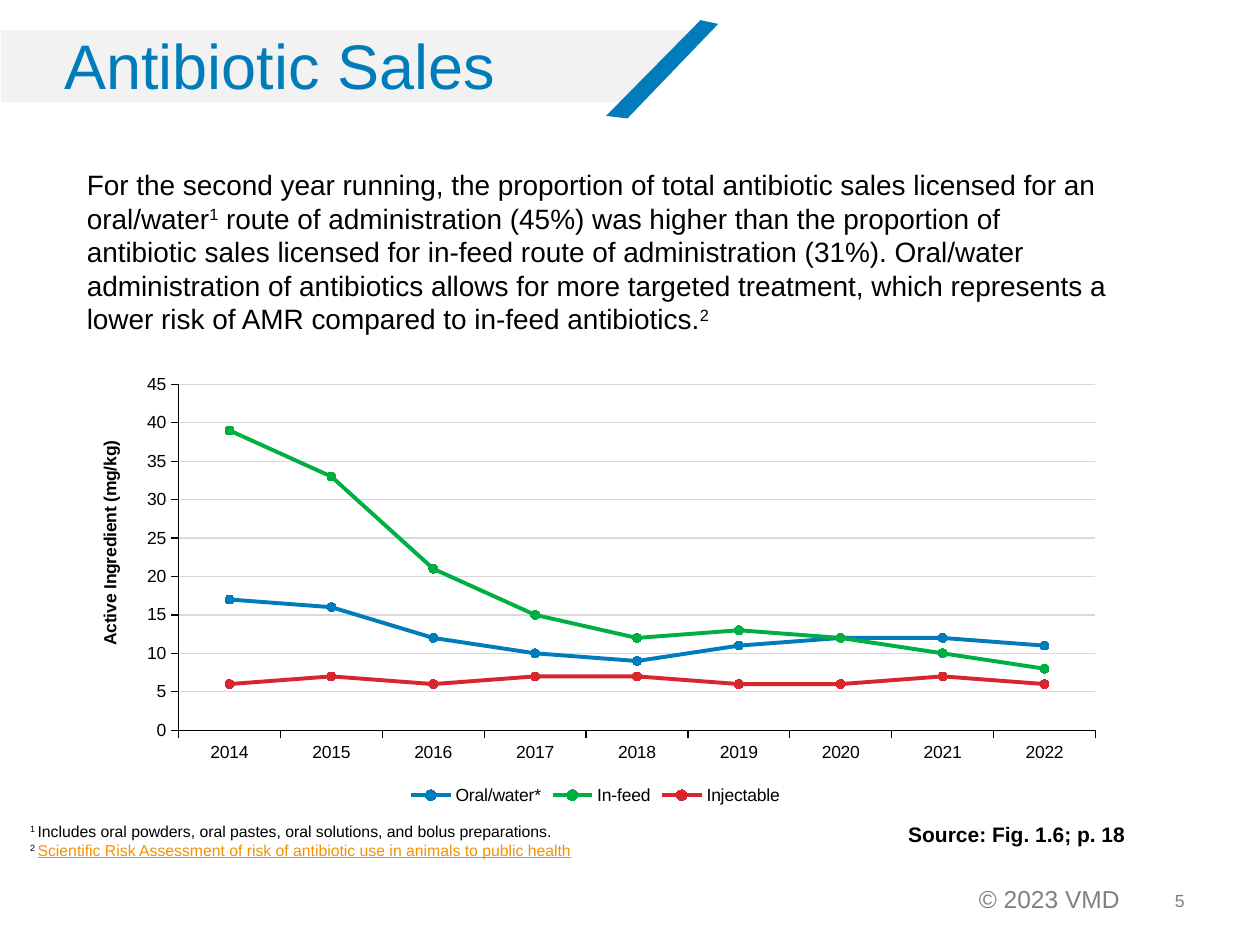
from dataclasses import dataclass
from typing import Optional

from lxml.etree import SubElement
from pptx import Presentation
from pptx.chart.chart import Chart
from pptx.chart.data import CategoryChartData
from pptx.dml.color import RGBColor
from pptx.enum.chart import (XL_CHART_TYPE, XL_LEGEND_POSITION,
                             XL_MARKER_STYLE, XL_TICK_MARK)
from pptx.enum.text import MSO_ANCHOR, PP_ALIGN
from pptx.oxml import parse_xml
from pptx.oxml.ns import nsdecls, qn
from pptx.slide import Slide
from pptx.util import Pt

BLACK = RGBColor(0, 0, 0)
WHITE = RGBColor(255, 255, 255)
BLUE = RGBColor(0x00, 0x7C, 0xBA)
GREEN = RGBColor(0x00, 0xAF, 0x41)
RED = RGBColor(0xD9, 0x26, 0x2E)
ORANGE = RGBColor(0xF4, 0x91, 0x00)
PALE_GRAY = RGBColor(0xF2, 0xF2, 0xF2)
GRID_GRAY = RGBColor(0xD9, 0xD9, 0xD9)
COPYRIGHT_GRAY = RGBColor(0x80, 0x80, 0x80)
NUMBER_GRAY = RGBColor(0x7F, 0x7F, 0x7F)
FONT = "Arial"


@dataclass
class Span:
    text: str
    raised: bool = False
    underline: bool = False
    color: Optional[RGBColor] = None


@dataclass
class TextBox:
    left: float
    top: float
    width: float
    height: float
    paragraphs: list[list[Span]]
    size: float
    color: RGBColor = BLACK
    bold: bool = False
    wrap: bool = True
    inset: bool = True
    align: PP_ALIGN = PP_ALIGN.LEFT
    anchor: MSO_ANCHOR = MSO_ANCHOR.TOP


@dataclass
class Band:
    points: list[tuple[float, float]]
    color: RGBColor


@dataclass
class Series:
    name: str
    values: list[int]
    color: RGBColor


BANDS = [
    Band([(0.72, 17.28), (407.52, 17.28), (352.08, 58.32), (0.72, 58.32)], PALE_GRAY),
    Band([(400.32, 11.52), (410.4, 13.68), (358.56, 67.68), (346.32, 66.24)], BLUE),
]

TEXT_BOXES = [
    TextBox(552.24, 501.84, 95.76, 24.48, [[Span("© 2023 VMD")]], 14,
            COPYRIGHT_GRAY, wrap=False),
    TextBox(516.24, 500.4, 167.76, 28.8, [[Span("5")]], 10, NUMBER_GRAY,
            align=PP_ALIGN.RIGHT, anchor=MSO_ANCHOR.MIDDLE),
    TextBox(511.92, 465.84, 164.16, 21.6, [[Span("Source: Fig. 1.6; p. 18")]], 12,
            bold=True),
    TextBox(36.72, 15.12, 645.84, 56.88, [[Span("Antibiotic Sales")]], 36, BLUE,
            inset=False),
    TextBox(42.48, 92.16, 601.2, 104.4, [[
        Span("For the second year running, the proportion of total antibiotic sales "
             "licensed for an oral/water"),
        Span("1", raised=True),
        Span(" route of administration (45%) was higher than the proportion of "
             "antibiotic sales licensed for in-feed route of administration (31%). "
             "Oral/water administration of antibiotics allows for more targeted "
             "treatment, which represents a lower risk of AMR compared to in-feed "
             "antibiotics."),
        Span("2", raised=True)]], 16),
    TextBox(10.08, 465.84, 442.8, 28.8, [
        [Span("1 ", raised=True),
         Span("Includes oral powders, oral pastes, oral solutions, and bolus "
              "preparations.")],
        [Span("2 ", raised=True),
         Span("Scientific Risk Assessment of risk of antibiotic use in animals to "
              "public health", underline=True, color=ORANGE)]], 9),
]

YEARS = [str(year) for year in range(2014, 2023)]
SALES = [
    Series("Oral/water*", [17, 16, 12, 10, 9, 11, 12, 12, 11], BLUE),
    Series("In-feed", [39, 33, 21, 15, 12, 13, 12, 10, 8], GREEN),
    Series("Injectable", [6, 7, 6, 7, 7, 6, 6, 7, 6], RED),
]


def draw_band(page: Slide, band: Band) -> None:
    start, *rest = [(Pt(x), Pt(y)) for x, y in band.points]
    builder = page.shapes.build_freeform(*start)
    builder.add_line_segments(rest, close=True)
    shape = builder.convert_to_shape()
    shape.shadow.inherit = False
    shape.fill.solid()
    shape.fill.fore_color.rgb = band.color
    shape.line.fill.background()


def draw_text(page: Slide, item: TextBox) -> None:
    box = page.shapes.add_textbox(Pt(item.left), Pt(item.top),
                                  Pt(item.width), Pt(item.height))
    frame = box.text_frame
    frame.word_wrap = item.wrap
    frame.vertical_anchor = item.anchor
    if not item.inset:
        frame.margin_left = frame.margin_top = 0
        frame.margin_right = frame.margin_bottom = 0
    for index, spans in enumerate(item.paragraphs):
        para = frame.add_paragraph() if index else frame.paragraphs[0]
        para.alignment = item.align
        for span in spans:
            run = para.add_run()
            run.text = span.text
            run.font.name = FONT
            run.font.size = Pt(item.size)
            run.font.bold = item.bold
            run.font.underline = span.underline
            run.font.color.rgb = span.color or item.color
            if span.raised:
                run._r.get_or_add_rPr().set("baseline", "30000")


def set_layout(parent, index: int, **settings) -> None:
    """Place a chart part by hand, as fractions of the chart."""
    for old in parent.findall(qn("c:layout")):
        parent.remove(old)
    layout = parse_xml(f"<c:layout {nsdecls('c')}><c:manualLayout/></c:layout>")
    for name, value in settings.items():
        SubElement(layout[0], qn(f"c:{name}")).set("val", str(value))
    parent.insert(index, layout)


def style_font(font, size: float, bold: bool = False) -> None:
    font.name = FONT
    font.size = Pt(size)
    font.bold = bold
    font.color.rgb = BLACK


def style_line(line, color: RGBColor, width: float) -> None:
    line.color.rgb = color
    line.width = Pt(width)


def style_axes(chart: Chart) -> None:
    for axis in (chart.category_axis, chart.value_axis):
        axis.major_tick_mark = XL_TICK_MARK.OUTSIDE
        axis.minor_tick_mark = XL_TICK_MARK.NONE
        style_font(axis.tick_labels.font, 10)
        style_line(axis.format.line, BLACK, 0.75)
    axis = chart.value_axis
    axis.minimum_scale, axis.maximum_scale, axis.major_unit = 0, 45, 5
    axis.tick_labels.number_format = "0"
    axis.tick_labels.number_format_is_linked = False
    style_line(axis.major_gridlines.format.line, GRID_GRAY, 0.75)
    para = axis.axis_title.text_frame.paragraphs[0]
    para.text = "Active Ingredient (mg/kg)"
    style_font(para.runs[0].font, 10, bold=True)
    set_layout(axis.axis_title._element, 1, xMode="edge", yMode="edge",
               x=0.02, y=0.16)


def draw_chart(page: Slide) -> None:
    data = CategoryChartData(number_format="0")
    data.categories = YEARS
    for item in SALES:
        data.add_series(item.name, item.values)
    chart = page.shapes.add_chart(XL_CHART_TYPE.LINE_MARKERS, Pt(42.48), Pt(209.52),
                                  Pt(595.44), Pt(253.44), data).chart
    chart.has_title = False
    style_font(chart.font, 12)
    style_axes(chart)
    for series, item in zip(chart.plots[0].series, SALES):
        series.smooth = False
        style_line(series.format.line, item.color, 2.25)
        series.marker.style = XL_MARKER_STYLE.CIRCLE
        series.marker.size = 5
        series.marker.format.fill.solid()
        series.marker.format.fill.fore_color.rgb = item.color
        style_line(series.marker.format.line, item.color, 0.75)
    chart.plots[0].vary_by_categories = False
    chart.has_legend = True
    chart.legend.position = XL_LEGEND_POSITION.BOTTOM
    chart.legend.include_in_layout = False
    style_font(chart.legend.font, 10)
    set_layout(chart._chartSpace.chart.plotArea, 0, layoutTarget="inner",
               xMode="edge", yMode="edge", x=0.1, y=0.04, w=0.88, h=0.78)


def main() -> None:
    deck = Presentation()
    deck.slide_width, deck.slide_height = Pt(720), Pt(540)
    page = deck.slides.add_slide(deck.slide_layouts[6])
    page.background.fill.solid()
    page.background.fill.fore_color.rgb = WHITE
    # Title banner, then all wording, then the sales chart
    for band in BANDS:
        draw_band(page, band)
    for item in TEXT_BOXES:
        draw_text(page, item)
    draw_chart(page)
    deck.save("out.pptx")


if __name__ == "__main__":
    main()
